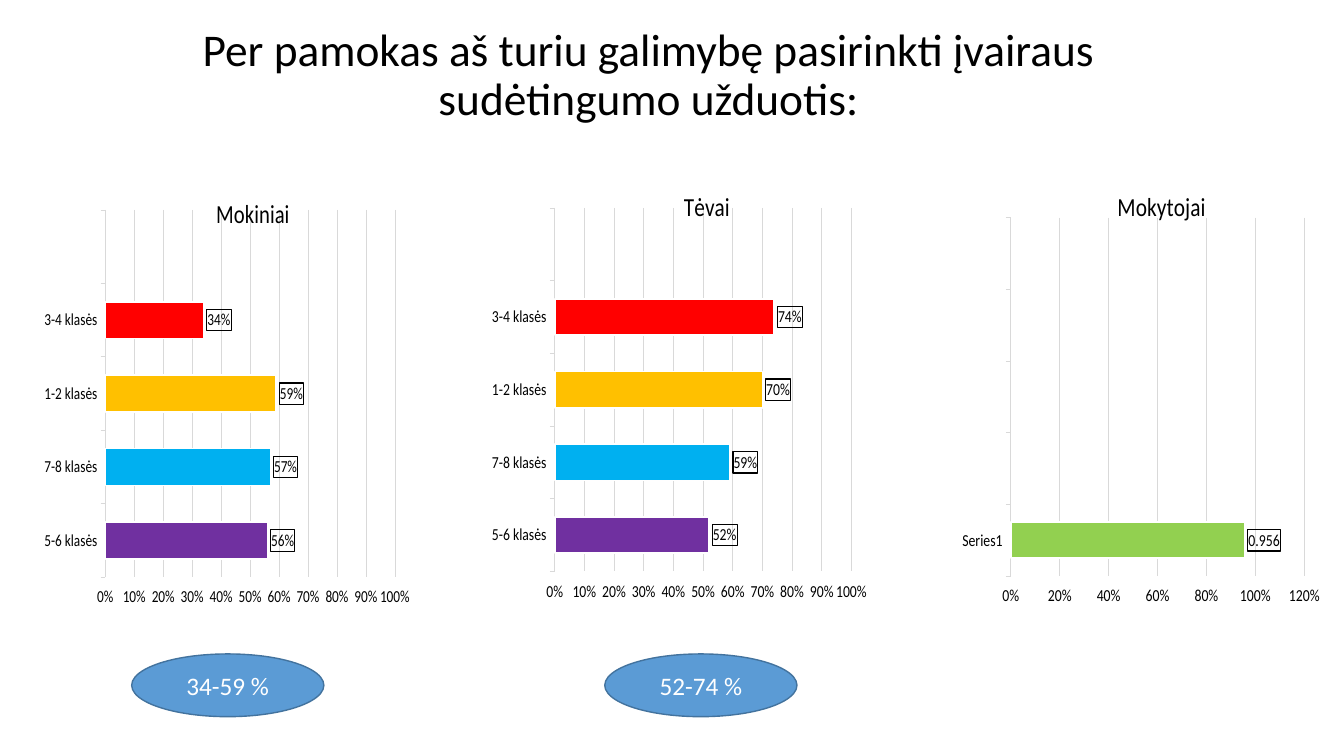
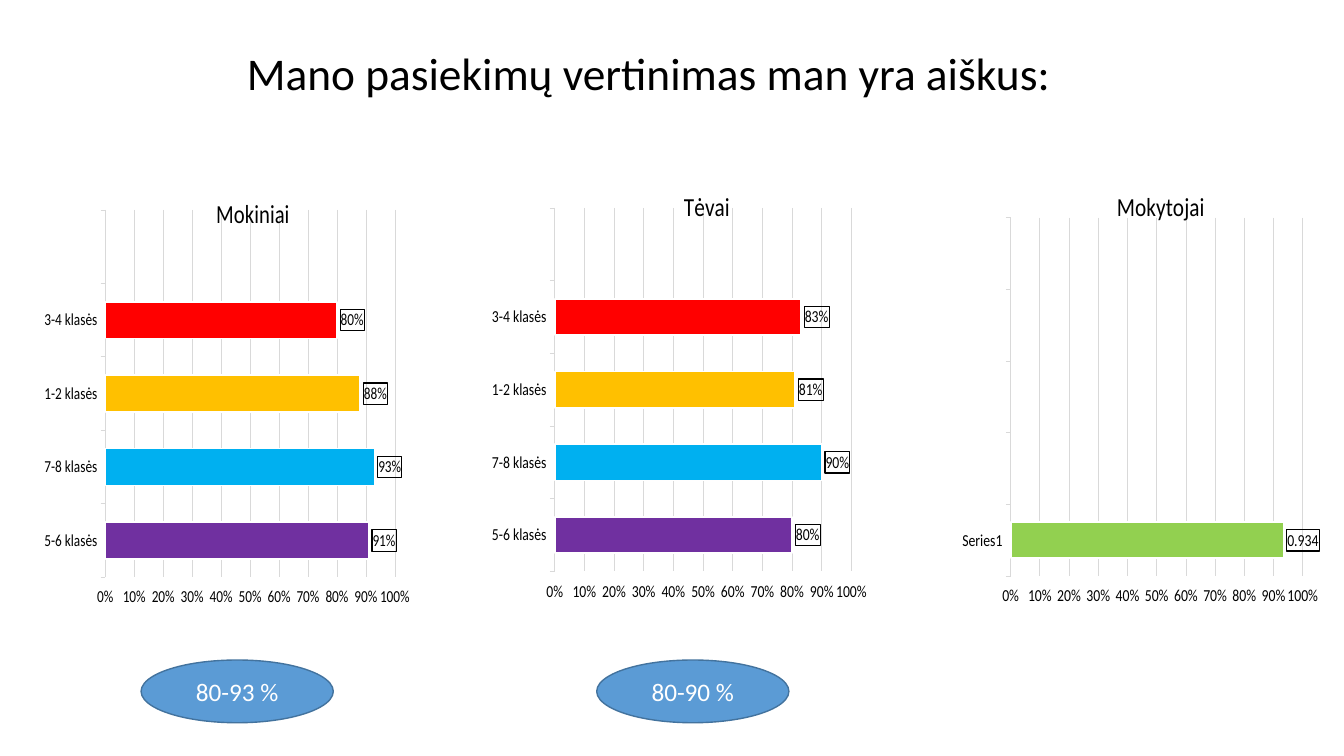
import pptx
import pptx.util
import pptx.chart.data
import pptx.dml.color
import pptx.enum.chart
import pptx.enum.shapes
import pptx.enum.text
import pptx.oxml
import pptx.oxml.ns
import lxml.etree

RGB = pptx.dml.color.RGBColor
Pt = pptx.util.Pt
BLACK = RGB(0x00, 0x00, 0x00)
WHITE = RGB(0xFF, 0xFF, 0xFF)
GRID = RGB(0xD9, 0xD9, 0xD9)
BLUE = RGB(0x5B, 0x9B, 0xD5)
EDGE = RGB(0x43, 0x73, 0x9E)
VIOLET = RGB(0x70, 0x30, 0xA0)
SKY = RGB(0x00, 0xB0, 0xF0)
AMBER = RGB(0xFF, 0xC0, 0x00)
RED = RGB(0xFF, 0x00, 0x00)
GREEN = RGB(0x92, 0xD0, 0x50)

FONT = "Calibri"
WIDE = pptx.util.Inches(13.33)
HIGH = pptx.util.Inches(7.5)
SLOTS = 5
CLASSES = ["5-6 klasės", "7-8 klasės", "1-2 klasės", "3-4 klasės"]
HUES = [VIOLET, SKY, AMBER, RED]

# Per audience: box, plot area and title corner; boxes are % of the slide,
# the rest are shares of the chart.
PANELS = {
    "Mokiniai": ((3.3, 22.1, 27.2, 63.1), (0, 0.09, 1, 0.77), (0.37, 0.05)),
    "Tėvai": ((36.6, 21.1, 27.9, 64.1), (0.01, 0.1, 0.97, 0.75), (0.42, 0.05)),
    "Mokytojai": ((71.6, 21.1, 26.6, 64.1), (0, 0.12, 1, 0.74), (0.35, 0.05)),
}

TOPICS = [
    {
        "title": "Per pamokas aš turiu galimybę pasirinkti įvairaus "
                 "sudėtingumo užduotis:",
        "pupils": [0.56, 0.57, 0.59, 0.34],
        "parents": [0.52, 0.59, 0.7, 0.74],
        "staff": 0.956, "top": 1.2, "step": 0.2,
        "ovals": [("34-59 %", 9.8, 86.5), ("52-74 %", 45, 86.5)],
    },
    {
        "title": "Mano pasiekimų vertinimas man yra aiškus:",
        "pupils": [0.91, 0.93, 0.88, 0.8],
        "parents": [0.8, 0.9, 0.81, 0.83],
        "staff": 0.934, "top": 1, "step": 0.1,
        "ovals": [("80-93 %", 10.5, 87.3), ("80-90 %", 44.4, 87.3)],
    },
]


def area(left, top, width, height):
    """Turn percentages of the slide into lengths."""
    return [int(part * full / 100) for part, full in
            zip((left, top, width, height), (WIDE, HIGH, WIDE, HIGH))]


def style(font, size, color=BLACK):
    font.name = FONT
    font.size = Pt(size)
    font.bold = False
    font.color.rgb = color


def stroke(line, color, width):
    line.color.rgb = color
    line.width = Pt(width)


def place(node, index, spots, inner=False):
    """Give a chart part a manual layout at the given child index."""
    tag = pptx.oxml.ns.qn
    for old in node.findall(tag("c:layout")):
        node.remove(old)
    layout = lxml.etree.Element(tag("c:layout"))
    manual = lxml.etree.SubElement(layout, tag("c:manualLayout"))
    rows = [("layoutTarget", "inner")] if inner else []
    rows += [("xMode", "edge"), ("yMode", "edge")]
    rows += zip("xywh", spots)
    for name, value in rows:
        lxml.etree.SubElement(manual, tag("c:" + name)).set("val", str(value))
    node.insert(index, layout)


def frame(labels):
    """Draw a black border around the data labels."""
    border = pptx.oxml.parse_xml(
        f'<c:spPr {pptx.oxml.ns.nsdecls("c", "a")}><a:noFill/>'
        '<a:ln w="12700"><a:solidFill><a:srgbClr val="000000"/>'
        '</a:solidFill></a:ln></c:spPr>')
    text = labels._element.find(pptx.oxml.ns.qn("c:txPr"))
    text.addprevious(border)


def add_title(slide, text):
    title = slide.shapes.title
    title.left, title.top, title.width, title.height = area(6.4, 3.6, 83.7, 12.9)
    body = title.text_frame
    body.text = text
    body.word_wrap = True
    body.auto_size = pptx.enum.text.MSO_AUTO_SIZE.NONE
    body.vertical_anchor = pptx.enum.text.MSO_ANCHOR.MIDDLE
    para = body.paragraphs[0]
    para.alignment = pptx.enum.text.PP_ALIGN.CENTER
    para.line_spacing = 0.9
    style(para.runs[0].font, 32.4)


def set_axes(chart, top, step):
    cats, vals = chart.category_axis, chart.value_axis
    for axis in (cats, vals):
        axis.major_tick_mark = pptx.enum.chart.XL_TICK_MARK.OUTSIDE
        axis.minor_tick_mark = pptx.enum.chart.XL_TICK_MARK.NONE
        style(axis.tick_labels.font, 12)
    stroke(cats.format.line, GRID, 0.75)
    vals.format.line.fill.background()
    vals.has_major_gridlines = True
    stroke(vals.major_gridlines.format.line, GRID, 0.75)
    vals.minimum_scale = 0
    vals.maximum_scale = top
    vals.major_unit = step
    vals.tick_labels.number_format = "0%"
    vals.tick_labels.number_format_is_linked = False


def add_bars(slide, name, cats, values, hues, form="0%", top=1, step=0.1):
    box, plot_box, corner = PANELS[name]
    data = pptx.chart.data.CategoryChartData()
    data.categories = cats + [""] * (SLOTS - len(cats))
    data.add_series(name, values + [None] * (SLOTS - len(values)))
    chart = slide.shapes.add_chart(
        pptx.enum.chart.XL_CHART_TYPE.BAR_CLUSTERED, *area(*box), data).chart
    style(chart.font, 10)
    chart.has_legend = False
    chart.has_title = True
    head = chart.chart_title.text_frame
    head.text = name
    style(head.paragraphs[0].runs[0].font, 18.6)
    place(chart.chart_title._element, 1, corner)
    set_axes(chart, top, step)

    plot = chart.plots[0]
    plot.gap_width = 100
    plot.vary_by_categories = False
    place(plot._element.getparent(), 0, plot_box, inner=True)
    bars = plot.series[0]
    bars.invert_if_negative = False
    for index, hue in enumerate(hues):
        look = bars.points[index].format
        look.fill.solid()
        look.fill.fore_color.rgb = hue
        stroke(look.line, WHITE, 1.5)

    labels = bars.data_labels
    labels.show_value = True
    labels.position = pptx.enum.chart.XL_LABEL_POSITION.OUTSIDE_END
    labels.number_format = form
    labels.number_format_is_linked = False
    style(labels.font, 12)
    frame(labels)


def add_oval(slide, text, left, top):
    oval = slide.shapes.add_shape(
        pptx.enum.shapes.MSO_SHAPE.OVAL, *area(left, top, 14.3, 8.3))
    oval.shadow.inherit = False
    oval.fill.solid()
    oval.fill.fore_color.rgb = BLUE
    stroke(oval.line, EDGE, 1)
    body = oval.text_frame
    body.text = text
    body.vertical_anchor = pptx.enum.text.MSO_ANCHOR.MIDDLE
    para = body.paragraphs[0]
    para.alignment = pptx.enum.text.PP_ALIGN.CENTER
    style(para.runs[0].font, 18, WHITE)


def main():
    deck = pptx.Presentation()
    deck.slide_width, deck.slide_height = WIDE, HIGH
    for topic in TOPICS:
        slide = deck.slides.add_slide(deck.slide_layouts.get_by_name("Title Only"))
        add_title(slide, topic["title"])
        add_bars(slide, "Mokiniai", CLASSES, topic["pupils"], HUES)
        add_bars(slide, "Tėvai", CLASSES, topic["parents"], HUES)
        add_bars(slide, "Mokytojai", ["Series1"], [topic["staff"]], [GREEN],
                 "General", topic["top"], topic["step"])
        for oval in topic["ovals"]:
            add_oval(slide, *oval)
    deck.save("out.pptx")


if __name__ == "__main__":
    main()
